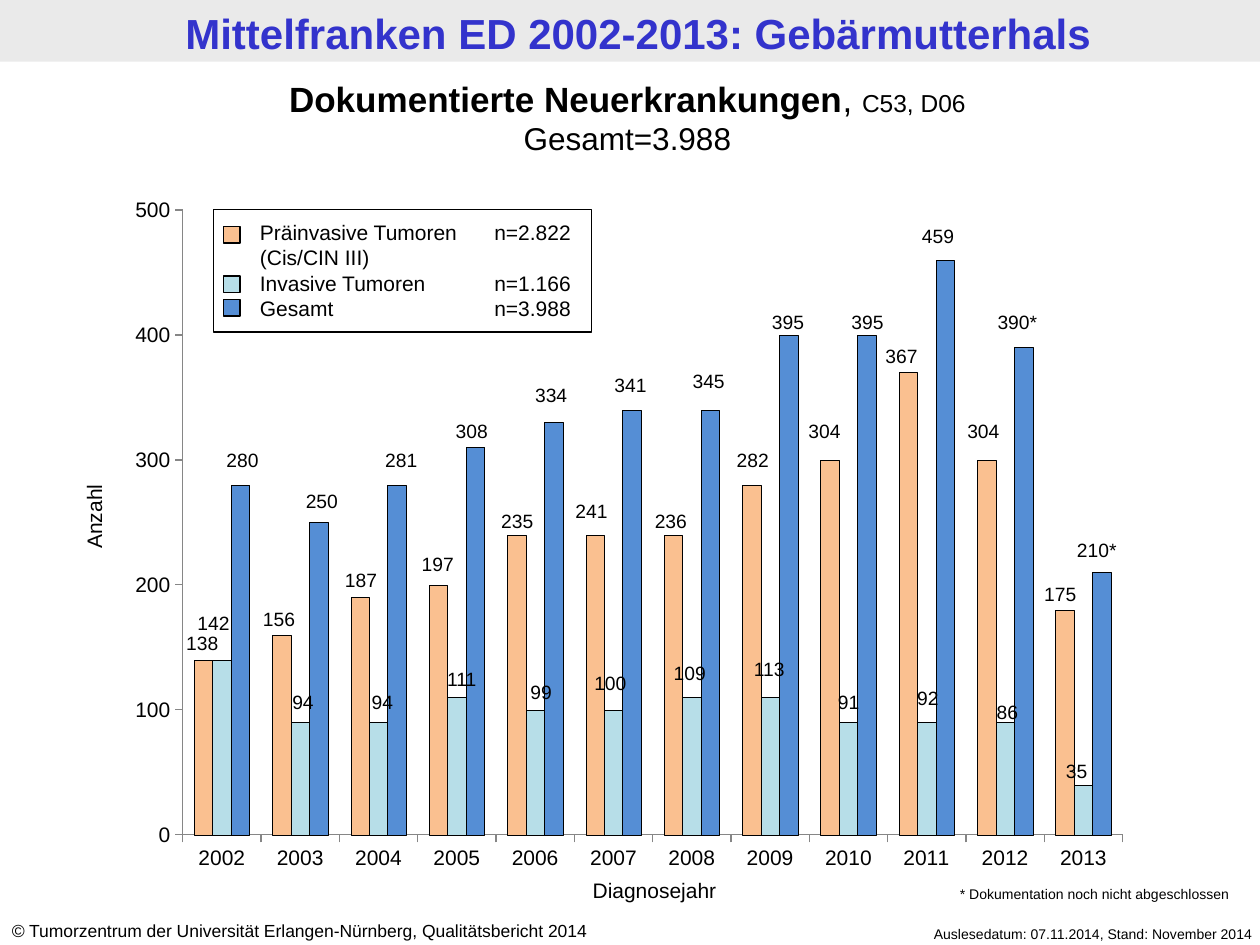
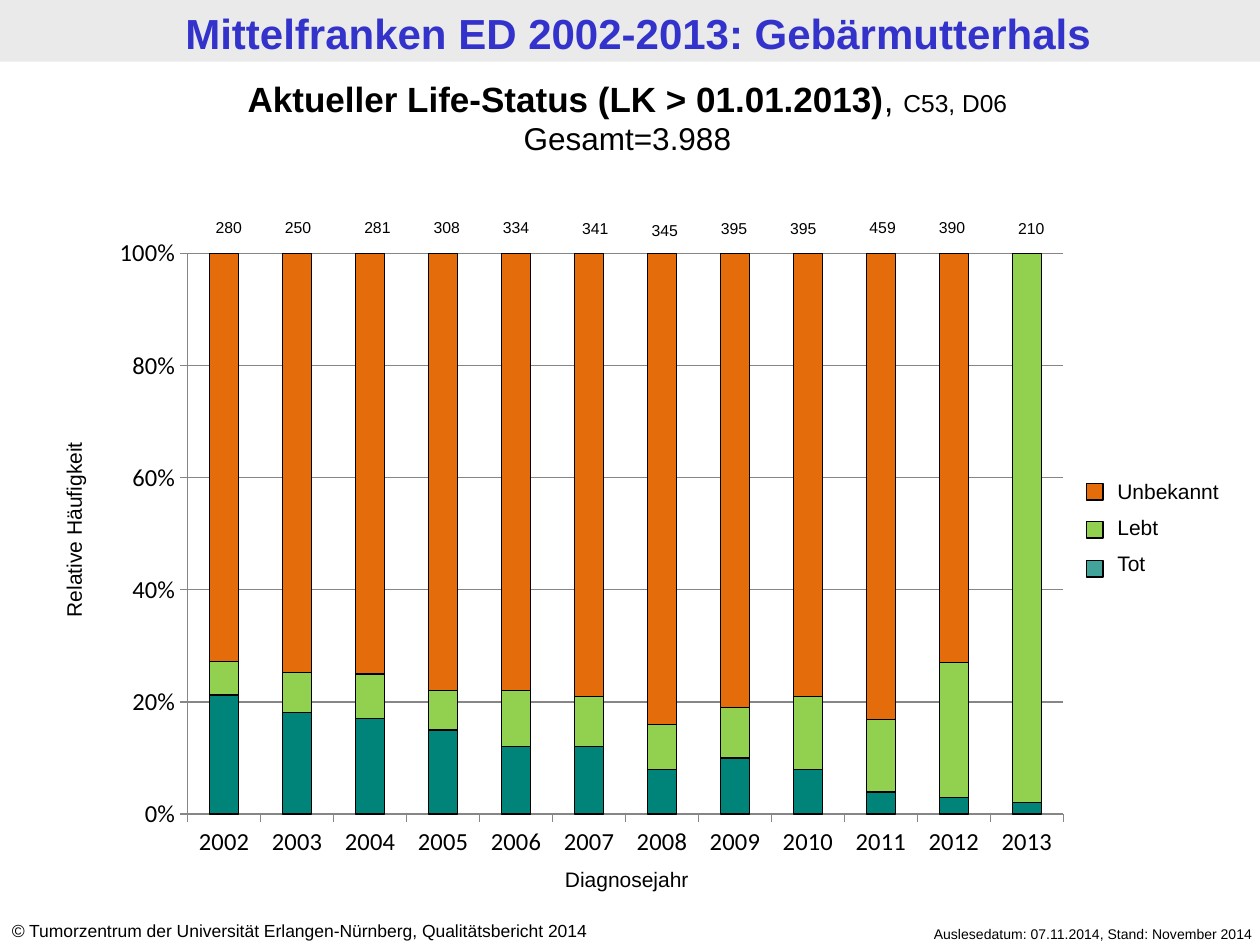
"""Build two slides on new cases and life status by year of diagnosis."""
from dataclasses import dataclass

from lxml import etree
from pptx import Presentation
from pptx.chart.data import CategoryChartData
from pptx.dml.color import RGBColor
from pptx.enum.chart import XL_CHART_TYPE, XL_TICK_MARK
from pptx.enum.shapes import MSO_SHAPE
from pptx.enum.text import PP_ALIGN
from pptx.oxml.ns import qn
from pptx.util import Inches, Pt

RECT = MSO_SHAPE.RECTANGLE
LEFT, MID, RIGHT = PP_ALIGN.LEFT, PP_ALIGN.CENTER, PP_ALIGN.RIGHT
CLUSTER = XL_CHART_TYPE.COLUMN_CLUSTERED
STACK = XL_CHART_TYPE.COLUMN_STACKED_100
OUT, NONE = XL_TICK_MARK.OUTSIDE, XL_TICK_MARK.NONE

COLS, ROWS = 100, 75
UNIT = Inches(0.1)
FONT, BODY = "Arial", "Calibri"
BLACK, GREY, BAND, BLUE = "000000", "868686", "EAEAEA", "3333CC"
PEACH, SKY, ROYAL = "FAC090", "B7DEE8", "558ED5"
TEAL, LIME, RUST = "008378", "92D050", "E46C0A"
YEARS = [str(year) for year in range(2002, 2014)]
TABS = ((1.47, "l"), (1.86, "l"), (2.36, "r"), (4.41, "l"))


@dataclass
class Box:
    """Place in columns and rows of the grid."""
    x: float
    y: float
    w: float
    h: float

    def emu(self) -> list[int]:
        """Return left, top, width and height as lengths."""
        return [round(n * UNIT) for n in (self.x, self.y, self.w, self.h)]


@dataclass
class Run:
    """Piece of text in one style."""
    text: str
    size: float = 12
    bold: bool = False
    slant: bool = False
    tint: str = BLACK


@dataclass
class Row:
    """Series of a chart."""
    name: str
    tint: str
    vals: list[int]


@dataclass
class Plot:
    """Chart with its frame, inner plot area and axis style."""
    kind: int
    box: Box
    area: Box
    rows: list[Row]
    gap: int
    step: float
    form: str
    size: int
    font: str
    edge: float
    top: float | None = None
    grid: bool = False
    place: int = 0


@dataclass
class Tags:
    """Row of value labels above the bars of one series."""
    width: float
    lefts: list[float]
    tops: list[float]
    texts: list[str]


CASES = [
    Row("Präinvasive Tumoren", PEACH,
        [138, 156, 187, 197, 235, 241, 236, 282, 304, 367, 304, 175]),
    Row("Invasive Tumoren", SKY,
        [142, 94, 94, 111, 99, 100, 109, 113, 91, 92, 86, 35]),
    Row("Gesamt", ROYAL,
        [280, 250, 281, 308, 334, 341, 345, 395, 395, 459, 390, 210]),
]
STATES = [
    Row("Tot", TEAL, [21, 18, 17, 15, 12, 12, 8, 10, 8, 4, 3, 2]),
    Row("Lebt", LIME, [6, 7, 8, 7, 10, 9, 8, 9, 13, 13, 24, 98]),
    Row("Unbekannt", RUST, [72, 74, 75, 78, 78, 79, 84, 81, 79, 84, 73, 0]),
]
TOTALS = [str(val) for val in CASES[2].vals]
STARRED = TOTALS[:-2] + [text + "*" for text in TOTALS[-2:]]
LABELS = [
    Tags(5.3, [13.4, 19.5, 26, 32.1, 38.4, 44.3, 50.6, 57.1, 62.8, 68.9, 75.4, 81.5],
         [49.6, 47.7, 44.6, 43.3, 39.9, 39.1, 39.9, 35.1, 32.8, 26.8, 32.8, 45.7],
         [str(val) for val in CASES[0].vals]),
    Tags(6.3, [13.8, 20.9, 27.2, 33.5, 39.8, 45.3, 51.6, 57.9, 64.2, 70.5, 76.8, 82.3],
         [48, 54.3, 54.3, 52.5, 53.5, 52.8, 52, 51.7, 54.3, 54, 55.1, 59.8],
         [str(val) for val in CASES[1].vals]),
    Tags(6.3, [16.1, 22.4, 28.7, 34.3, 40.6, 46.9, 53.1, 59.4, 65.7, 71.3, 77.6, 83.9],
         [35.1, 38.3, 35.1, 32.8, 29.9, 29.1, 28.8, 24.1, 24.1, 17.3, 24.1, 42.2],
         STARRED),
]
SUMS = Tags(
    5.5, [15.4, 20.9, 27.2, 32.7, 38.2, 44.5, 50, 55.5, 61, 67.3, 72.8, 79.1],
    [16.8] * 5 + [16.9, 17, 16.9, 16.9, 16.8, 16.8, 16.9], TOTALS)


def color(code: str) -> RGBColor:
    """Turn a hex string into a colour."""
    return RGBColor.from_string(code)


def write(slide, box: Box, paras: list[list[Run]], align=LEFT,
          turn: float = 0, gap: float = 0, tabs=()) -> None:
    """Add a text box, run by run."""
    shape = slide.shapes.add_textbox(*box.emu())
    shape.rotation = turn
    frame = shape.text_frame
    frame.word_wrap = True
    for i, runs in enumerate(paras):
        para = frame.paragraphs[0] if i == 0 else frame.add_paragraph()
        para.alignment = align
        if i and gap:
            para.space_before = Pt(gap)
        if tabs:
            stops = etree.SubElement(para._p.get_or_add_pPr(), qn("a:tabLst"))
            for pos, side in tabs:
                etree.SubElement(stops, qn("a:tab"), pos=str(Inches(pos)), algn=side)
        for item in runs:
            run = para.add_run()
            run.text = item.text
            font = run.font
            font.name, font.size = FONT, Pt(item.size)
            font.bold, font.italic = item.bold, item.slant
            font.color.rgb = color(item.tint)


def block(slide, box: Box, fill: str = "", line: str = "", alpha: int = 100) -> None:
    """Add a rectangle with an optional fill and line."""
    shape = slide.shapes.add_shape(RECT, *box.emu())
    shape.shadow.inherit = False
    if fill:
        shape.fill.solid()
        shape.fill.fore_color.rgb = color(fill)
        if alpha < 100:
            tone = shape.fill._xPr.find(".//" + qn("a:srgbClr"))
            etree.SubElement(tone, qn("a:alpha"), val=str(alpha * 1000))
    else:
        shape.fill.background()
    if line:
        shape.line.color.rgb = color(line)
        shape.line.width = Pt(0.75)
    else:
        shape.line.fill.background()


def swatch(slide, x: float, y: float, tint: str, alpha: int = 100) -> None:
    """Add one colour key of a legend."""
    block(slide, Box(x, y, 1.3, 1.3), tint, BLACK, alpha)


def tag(slide, tags: Tags, size: float, high: float) -> None:
    """Write a row of value labels."""
    for x, y, text in zip(tags.lefts, tags.tops, tags.texts):
        write(slide, Box(x, y, tags.width, high), [[Run(text, size)]], MID)


def fit(chart, box: Box, area: Box) -> None:
    """Fix the inner plot area inside the chart frame."""
    plot = chart._chartSpace.chart.plotArea
    for old in plot.findall(qn("c:layout")):
        plot.remove(old)
    outer = etree.Element(qn("c:layout"))
    plot.insert(0, outer)
    inner = etree.SubElement(outer, qn("c:manualLayout"))
    parts = {
        "layoutTarget": "inner", "xMode": "edge", "yMode": "edge",
        "x": (area.x - box.x) / box.w, "y": (area.y - box.y) / box.h,
        "w": area.w / box.w, "h": area.h / box.h,
    }
    for name, val in parts.items():
        etree.SubElement(inner, qn("c:" + name), val=str(val))


def draw(slide, plot: Plot) -> None:
    """Add a column chart with its axes."""
    data = CategoryChartData()
    data.categories = YEARS
    for row in plot.rows:
        data.add_series(row.name, [round(val, plot.place) for val in row.vals])
    chart = slide.shapes.add_chart(plot.kind, *plot.box.emu(), data).chart
    chart.has_legend = chart.has_title = False
    chart.font.name, chart.font.size = BODY, Pt(18)
    chart.font.color.rgb = color(BLACK)
    fit(chart, plot.box, plot.area)
    bars = chart.plots[0]
    bars.vary_by_categories = False
    bars.gap_width = plot.gap
    bars.overlap = 100 if plot.kind == STACK else 0
    for series, row in zip(bars.series, plot.rows):
        series.format.fill.solid()
        series.format.fill.fore_color.rgb = color(row.tint)
        series.format.line.color.rgb = color(BLACK)
        series.format.line.width = Pt(plot.edge)
    for axis in (chart.category_axis, chart.value_axis):
        axis.major_tick_mark, axis.minor_tick_mark = OUT, NONE
        axis.format.line.color.rgb = color(GREY)
        font = axis.tick_labels.font
        font.name, font.size = plot.font, Pt(plot.size)
        font.color.rgb = color(BLACK)
    axis = chart.value_axis
    axis.major_unit = plot.step
    axis.minimum_scale = 0
    if plot.top:
        axis.maximum_scale = plot.top
    axis.tick_labels.number_format = plot.form
    axis.tick_labels.number_format_is_linked = False
    axis.has_major_gridlines = plot.grid
    if plot.grid:
        axis.major_gridlines.format.line.color.rgb = color(GREY)


def base(deck, head: str):
    """Add a slide with band, title, footers and heading."""
    slide = deck.slides.add_slide(deck.slide_layouts[6])
    block(slide, Box(0, 0, COLS, 4.9), BAND)
    title = Run("Mittelfranken ED 2002-2013: Gebärmutterhals", 24, True, tint=BLUE)
    write(slide, Box(0.65, 0.1, COLS, 4.9), [[title]], MID)
    date = Run("Auslesedatum: 07.11.2014, Stand: November 2014", 8)
    write(slide, Box(66.5, 72.95, 33.9, 2.4), [[date]], RIGHT)
    owner = " Tumorzentrum der Universität Erlangen-Nürnberg, Qualitätsbericht 2014"
    write(slide, Box(-0.05, 72.55, 52.4, 2.7),
          [[Run("©", 10, slant=True), Run(owner, 10)]])
    write(slide, Box(-0.4, 5.65, 100.4, 7.4),
          [[Run(head, 20, True), Run(", ", 20), Run("C53, D06", 14)],
           [Run("Gesamt=3.988", 18)]], MID)
    return slide


def cases(deck) -> None:
    """Build the slide on documented new cases."""
    slide = base(deck, "Dokumentierte Neuerkrankungen")
    draw(slide, Plot(CLUSTER, Box(9.1, 14.7, 81.6, 55.5), Box(14.5, 16.67, 74.6, 49.6),
                     CASES, 124, 100, "General", 12, FONT, 0.25, top=500, place=-1))
    write(slide, Box(36.6, 69.15, 30.7, 3), [[Run("Diagnosejahr")]], MID)
    write(slide, Box(-5.6, 39.5, 26.1, 3), [[Run("Anzahl")]], MID, turn=270)
    lines = ("Präinvasive Tumoren\tn=\t2.822 (Cis/CIN III)",
             "Invasive Tumoren\t\tn=\t1.166", "Gesamt\t\tn=\t3.988")
    write(slide, Box(19.65, 16.95, 27.3, 9.1), [[Run(line)] for line in lines],
          tabs=TABS)
    block(slide, Box(16.95, 16.65, 30, 9.7), line=BLACK)
    for row, y in zip(CASES, (18, 21.9, 23.8)):
        swatch(slide, 17.75, y, row.tint)
    for tags in LABELS:
        tag(slide, tags, 11, 2.9)
    write(slide, Box(75.2, 69.8, 27, 2.4),
          [[Run("* Dokumentation noch nicht abgeschlossen", 8)]])


def status(deck) -> None:
    """Build the slide on life status."""
    slide = base(deck, "Aktueller Life-Status (LK > 01.01.2013)")
    draw(slide, Plot(STACK, Box(7.9, 17.9, 78, 51.1), Box(14.9, 20.12, 69.5, 44.5),
                     STATES, 150, 0.2, "0%", 14, BODY, 0.75, grid=True))
    write(slide, Box(-6.15, 40.5, 24.1, 3.1), [[Run("Relative Häufigkeit")]],
          MID, turn=270)
    write(slide, Box(38.5, 68.25, 22.5, 3.1), [[Run("Diagnosejahr")]], MID)
    tag(slide, SUMS, 9, 2.5)
    write(slide, Box(87.7, 37.5, 12.3, 9.1),
          [[Run(row.name)] for row in reversed(STATES)], gap=6)
    swatch(slide, 86.25, 38.4, RUST)
    swatch(slide, 86.25, 41.4, LIME)
    swatch(slide, 86.25, 44.5, TEAL, 74)


def main() -> None:
    """Build and save the slides."""
    deck = Presentation()
    deck.slide_width, deck.slide_height = COLS * UNIT, ROWS * UNIT
    cases(deck)
    status(deck)
    deck.save("out.pptx")


if __name__ == "__main__":
    main()
